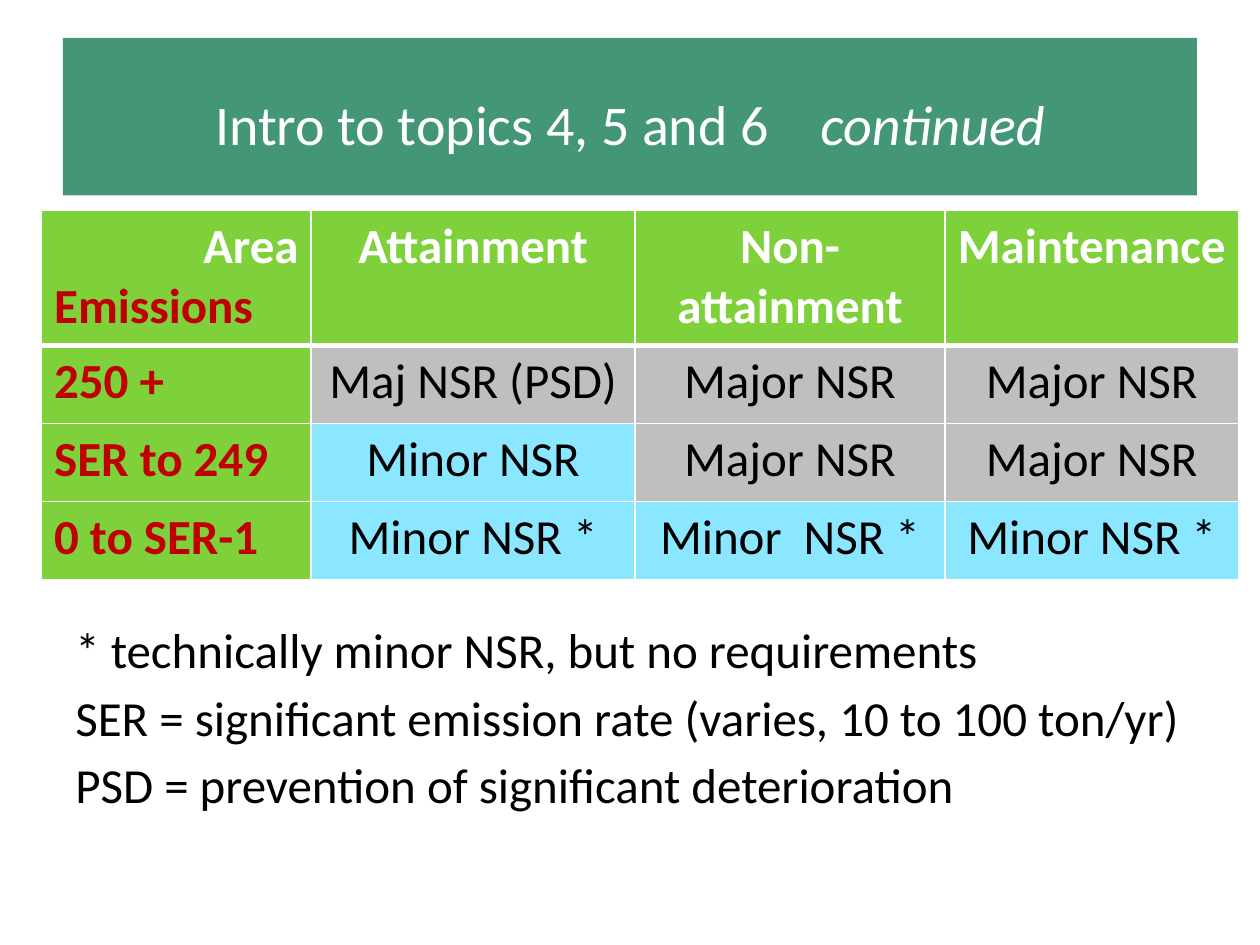
from lxml import etree
from pptx import Presentation
from pptx import util as u
from pptx.dml.color import RGBColor
from pptx.enum import shapes, text
from pptx.oxml import ns

COLORS = {
    "banner": "439777", "header": "7FD13B", "major": "BFBFBF",
    "minor": "8BE6FF", "label": "C00000", "white": "FFFFFF", "black": "000000",
}
LEFT, CENTER, RIGHT = text.PP_ALIGN.LEFT, text.PP_ALIGN.CENTER, text.PP_ALIGN.RIGHT


class SlideBuilder:
    """Holds the style and the current slide."""

    font = "Calibri"
    title_size, body_size = 32, 28

    def __init__(self, slide):
        self.slide = slide

    def box(self, at):
        return [u.Inches(length) for length in at]

    def fill(self, target, color):
        target.fill.solid()
        target.fill.fore_color.rgb = RGBColor.from_string(COLORS[color])

    def run(self, paragraph, words, color, size=None, bold=False, italic=False):
        run = paragraph.add_run()
        run.text = words
        run.font.name = self.font
        run.font.size = u.Pt(size or self.body_size)
        run.font.bold, run.font.italic = bold, italic
        run.font.color.rgb = RGBColor.from_string(COLORS[color])
        return run

    def banner(self, at, topic, suffix):
        banner = self.slide.shapes.add_shape(shapes.MSO_SHAPE.RECTANGLE, *self.box(at))
        banner.shadow.inherit = False
        self.fill(banner, "banner")
        banner.line.fill.background()
        banner.text_frame.vertical_anchor = text.MSO_ANCHOR.MIDDLE
        heading = banner.text_frame.paragraphs[0]
        heading.alignment = CENTER
        heading.line_spacing = 1.2
        heading.space_after = u.Pt(6)
        self.run(heading, topic, "white", self.title_size)
        # One widened space separates the topic from its suffix
        gap = self.run(heading, " ", "white", self.title_size)
        gap.font._element.set("spc", "2170")
        self.run(heading, suffix, "white", self.title_size, italic=True)

    def notes(self, at, lines):
        frame = self.slide.shapes.add_textbox(*self.box(at)).text_frame
        frame.word_wrap = True
        for index, line in enumerate(lines):
            note = frame.paragraphs[0] if index == 0 else frame.add_paragraph()
            note.space_after = u.Pt(5)
            self.run(note, line, "black")

    def borders(self, cell, **widths):
        properties = cell._tc.get_or_add_tcPr()
        for side in "LRTB":
            width = u.Pt(widths.get(side, 1))
            line = etree.SubElement(properties, ns.qn(f"a:ln{side}"), w=str(width))
            solid = etree.SubElement(line, ns.qn("a:solidFill"))
            etree.SubElement(solid, ns.qn("a:srgbClr"), val=COLORS["white"])

    def cell(self, cell, lines, fill, bold, **widths):
        """Each line is (words, color, alignment)."""
        self.borders(cell, **widths)
        self.fill(cell, fill)
        for index, (words, color, alignment) in enumerate(lines):
            frame = cell.text_frame
            paragraph = frame.paragraphs[0] if index == 0 else frame.add_paragraph()
            paragraph.alignment = alignment
            self.run(paragraph, words, color, bold=bold)

    def matrix(self, at, widths, heights, corner, areas, rows):
        table = self.slide.shapes.add_table(
            len(heights), len(widths), *self.box(at)).table
        table.horz_banding = False
        for column, width in zip(table.columns, widths):
            column.width = u.Inches(width)
        for row, height in zip(table.rows, heights):
            row.height = u.Inches(height)

        # Header row, set off by a thicker rule
        self.cell(table.cell(0, 0), corner, "header", True, B=3)
        for c, area in enumerate(areas, 1):
            self.cell(table.cell(0, c), [(area, "white", CENTER)], "header", True, B=3)

        # Emission rows, coloured by kind of review
        for r, (emissions, *reviews) in enumerate(rows, 1):
            top = 3 if r == 1 else 1
            self.cell(table.cell(r, 0), [(emissions, "label", LEFT)],
                      "header", True, T=top)
            for c, review in enumerate(reviews, 1):
                kind = "minor" if review.startswith("Minor") else "major"
                self.cell(table.cell(r, c), [(review, "black", CENTER)],
                          kind, False, T=top)


def main():
    deck = Presentation()
    deck.slide_width, deck.slide_height = u.Inches(10), u.Inches(7.5)
    builder = SlideBuilder(deck.slides.add_slide(deck.slide_layouts[6]))

    # Footnotes
    builder.notes((0.5, 4.87, 9, 1.71), [
        "* technically minor NSR, but no requirements",
        "SER = significant emission rate (varies, 10 to 100 ton/yr)",
        "PSD = prevention of significant deterioration",
    ])

    # Title
    builder.banner((0.5, 0.3, 9, 1.25), "Intro to topics 4, 5 and 6", "continued")

    # Review required by area and emissions
    builder.matrix(
        (0.33, 1.67, 9.5, 2.92),
        widths=[2.14, 2.57, 2.46, 2.33],
        heights=[1.07] + [0.62] * 3,
        corner=[("Area", "white", RIGHT), ("Emissions", "label", LEFT)],
        areas=["Attainment", "Non-attainment", "Maintenance"],
        rows=[
            ("250 +", "Maj NSR (PSD)", "Major NSR", "Major NSR"),
            ("SER to 249", "Minor NSR", "Major NSR", "Major NSR"),
            ("0 to SER-1", "Minor NSR *", "Minor  NSR *", "Minor NSR *"),
        ],
    )
    deck.save("out.pptx")


if __name__ == "__main__":
    main()
